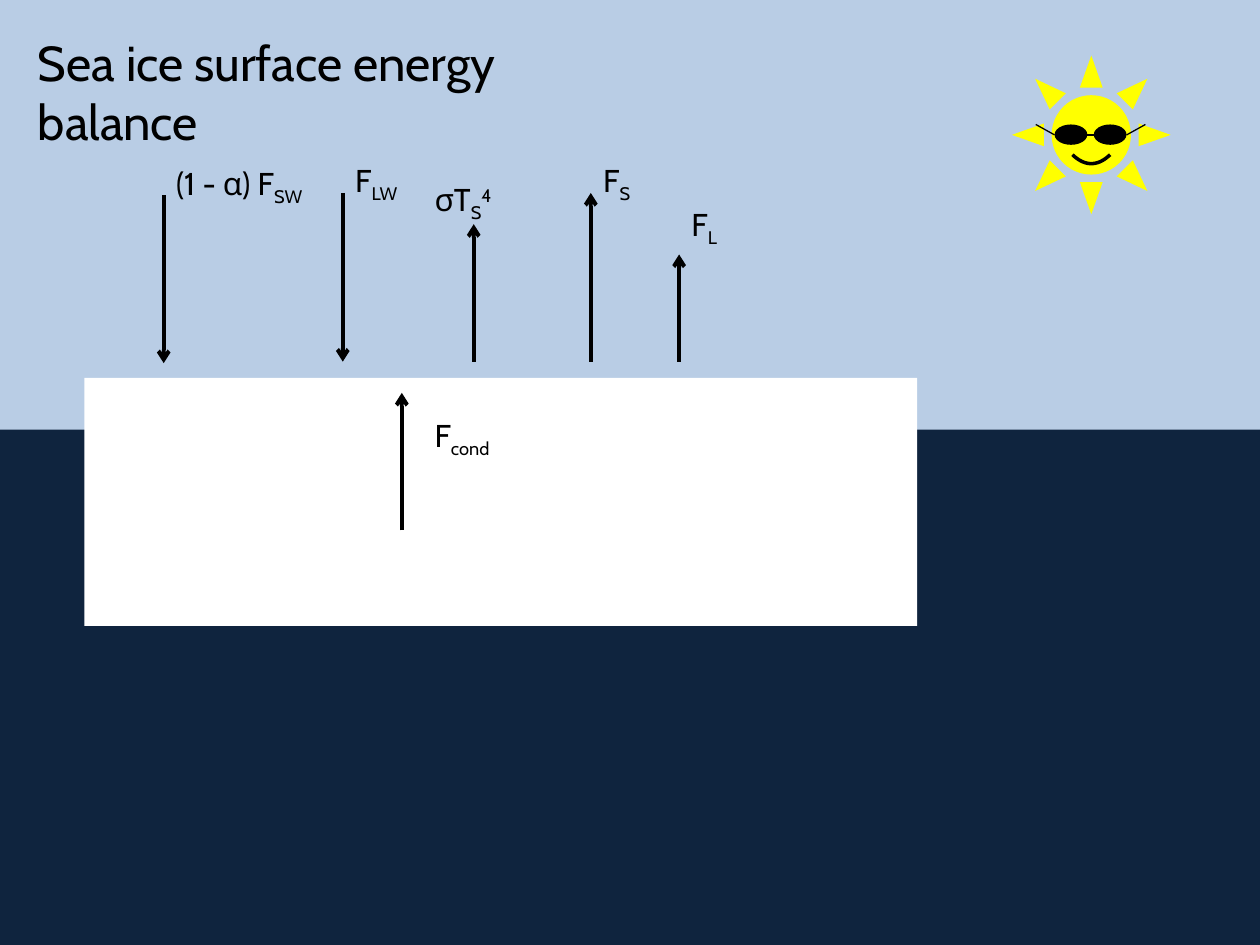
from lxml import etree
from pptx import Presentation
from pptx.dml.color import RGBColor
from pptx.enum.shapes import MSO_CONNECTOR, MSO_SHAPE
from pptx.enum.text import MSO_ANCHOR, MSO_AUTO_SIZE, PP_ALIGN
from pptx.oxml.ns import qn
from pptx.util import Cm, Pt

STRAIGHT = MSO_CONNECTOR.STRAIGHT
RECTANGLE, SUN, OVAL = MSO_SHAPE.RECTANGLE, MSO_SHAPE.SUN, MSO_SHAPE.OVAL
TOP, LEFT = MSO_ANCHOR.TOP, PP_ALIGN.LEFT
FIT_SHAPE = MSO_AUTO_SIZE.SHAPE_TO_FIT_TEXT

COLORS = {"sky": "B9CDE5", "ocean": "0F243E", "ice": "FFFFFF",
          "sun": "FFFF00", "ink": "000000"}
FONT = "Cabin"
SUB, SUPER = -25000, 30000

# All lengths are in centimetres
SLIDE_SIZE = (25.4, 19.05)
TITLE = "Sea ice surface energy balance"
TITLE_BOX = (0.51, 0.53, 10.0, 2.64)

SCENERY = [
    (RECTANGLE, "ocean", (0, 8.66, 25.4, 10.39)),
    (RECTANGLE, "ice", (1.7, 7.62, 16.79, 5.0)),
    (SUN, "sun", (20.4, 1.12, 3.2, 3.2)),
]
LENSES = [(21.26, 2.51, 0.66, 0.41), (22.05, 2.51, 0.66, 0.41)]
FRAME_LINES = [
    ((22.71, 2.72), (23.09, 2.51)),
    ((20.88, 2.51), (21.26, 2.72)),
    ((21.84, 2.72), (22.23, 2.72)),
]
SMILE = {"left": 21.62, "top": 3.12, "width": 0.76, "depth": 0.18, "steps": 24}

# Arrow (x, tail y, head y), label (left, top, width), label parts (text, baseline)
FLUXES = [
    ((3.3, 3.94, 7.32), (3.3, 3.18, 5.0), [("(1 - α) F", 0), ("SW", SUB)]),
    ((6.91, 3.89, 7.29), (6.91, 3.12, 1.75), [("F", 0), ("LW", SUB)]),
    ((9.55, 7.29, 4.52), (8.51, 3.51, 3.25), [("σT", 0), ("S", SUB), ("4", SUPER)]),
    ((11.91, 7.29, 3.89), (11.91, 3.12, 5.0), [("F", 0), ("S", SUB)]),
    ((13.69, 7.29, 5.13), (13.69, 4.01, 5.0), [("F", 0), ("L", SUB)]),
    ((8.1, 10.69, 7.92), (8.51, 8.26, 1.75), [("F", 0), ("cond", SUB)]),
]
LABEL_HEIGHT = 1.02


def rgb(name):
    return RGBColor.from_string(COLORS[name])


def cm(lengths):
    return [Cm(length) for length in lengths]


def add_filled(shapes, kind, color, box):
    shape = shapes.add_shape(kind, *cm(box))
    shape.shadow.inherit = False
    shape.fill.solid()
    shape.fill.fore_color.rgb = rgb(color)
    shape.line.fill.background()


def add_line(shapes, start, end, width, arrow=False):
    line = shapes.add_connector(STRAIGHT, *cm(start + end))
    line.line.color.rgb = rgb("ink")
    line.line.width = Pt(width)
    properties = line._element.spPr
    if arrow:
        etree.SubElement(properties.find(qn("a:ln")), qn("a:tailEnd"), type="arrow")
    etree.SubElement(properties, qn("a:effectLst"))


def write(frame, parts, size):
    """Fill a text frame with runs, given as (text, baseline) pairs."""
    settings = {"word_wrap": True, "vertical_anchor": TOP, "auto_size": FIT_SHAPE}
    for attribute, value in settings.items():
        setattr(frame, attribute, value)
    paragraph = frame.paragraphs[0]
    paragraph.alignment = LEFT
    for text, baseline in parts:
        run = paragraph.add_run()
        run.text = text
        for attribute, value in {"name": FONT, "size": Pt(size)}.items():
            setattr(run.font, attribute, value)
        run.font.color.rgb = rgb("ink")
        if baseline:
            run._r.get_or_add_rPr().set("baseline", str(baseline))


def add_smile(shapes):
    """Draw the mouth as a parabola that hangs from its two corners."""
    points = []
    for step in range(SMILE["steps"] + 1):
        t = step / SMILE["steps"]
        points.append((Cm(SMILE["left"] + SMILE["width"] * t),
                       Cm(SMILE["top"] + SMILE["depth"] * 4 * t * (1 - t))))
    builder = shapes.build_freeform(*points[0])
    builder.add_line_segments(points[1:], close=False)
    mouth = builder.convert_to_shape()
    mouth.shadow.inherit = False
    mouth.fill.background()
    mouth.line.color.rgb = rgb("ink")
    mouth.line.width = Pt(2)


def main():
    deck = Presentation()
    deck.slide_width, deck.slide_height = cm(SLIDE_SIZE)
    slide = deck.slides.add_slide(deck.slide_layouts[5])
    slide.background.fill.solid()
    slide.background.fill.fore_color.rgb = rgb("sky")
    shapes = slide.shapes

    title = shapes.title
    title.left, title.top, title.width, title.height = cm(TITLE_BOX)
    write(title.text_frame, [(TITLE, 0)], 28)

    for kind, color, box in SCENERY:
        add_filled(shapes, kind, color, box)

    sunglasses = shapes.add_group_shape().shapes
    for lens in LENSES:
        add_filled(sunglasses, OVAL, "ink", lens)
    for start, end in FRAME_LINES:
        add_line(sunglasses, start, end, 0.75)
    add_smile(shapes)

    for (x, tail, head), label_box, parts in FLUXES:
        add_line(shapes, (x, tail), (x, head), 2.25, arrow=True)
        label = shapes.add_textbox(*cm(label_box + (LABEL_HEIGHT,)))
        write(label.text_frame, parts, 18)

    deck.save("out.pptx")


if __name__ == "__main__":
    main()
